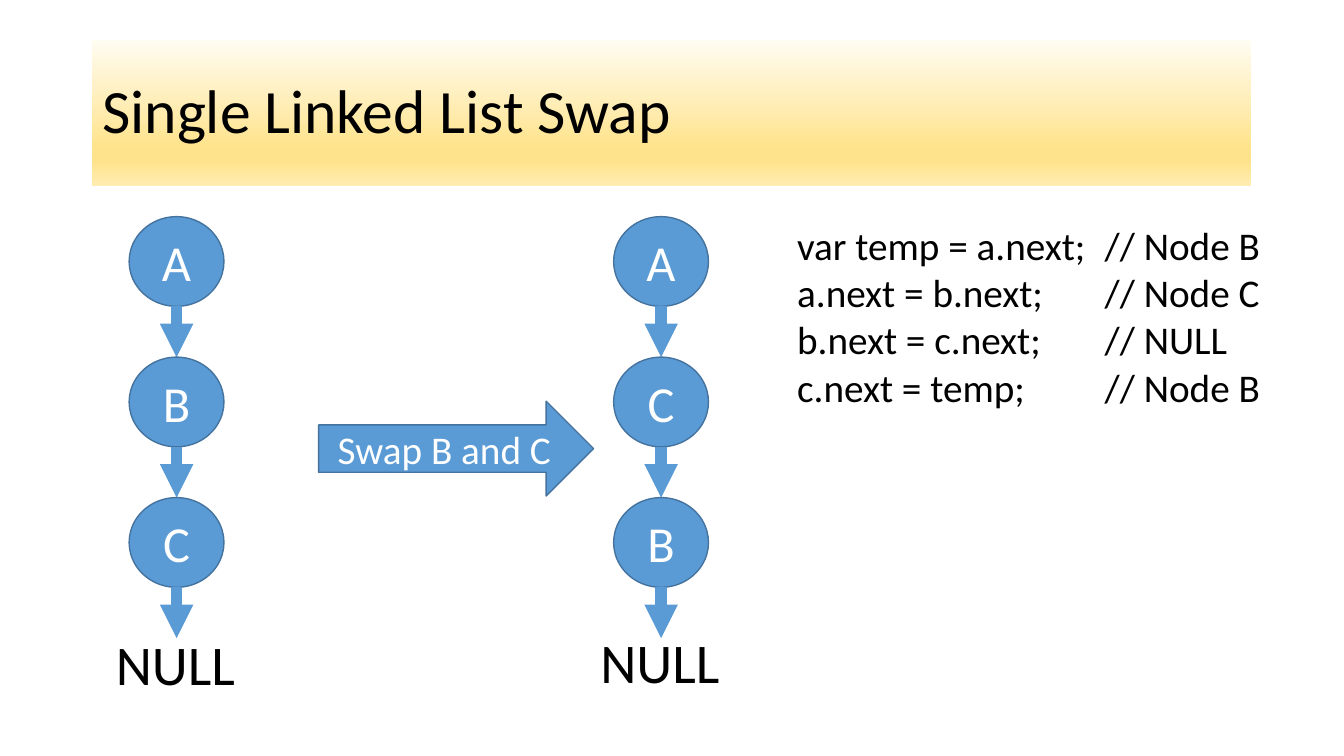
from lxml import etree
from pptx import Presentation
from pptx import util as u
from pptx.dml.color import RGBColor
from pptx.enum import shapes, text
from pptx.oxml import ns

BLUE = RGBColor(0x5B, 0x9B, 0xD5)
OUTLINE = RGBColor(0x43, 0x73, 0x9E)
WHITE = RGBColor(0xFF, 0xFF, 0xFF)
BLACK = RGBColor(0x00, 0x00, 0x00)
BANNER_STOPS = [
    (0, RGBColor(0xFF, 0xFC, 0xF2)),
    (74, RGBColor(0xFF, 0xE3, 0x8C)),
    (83, RGBColor(0xFF, 0xE3, 0x8C)),
    (100, RGBColor(0xFF, 0xEC, 0xB2)),
]


def write(shape, lines, size, color, align):
    frame = shape.text_frame
    frame.text = lines
    for paragraph in frame.paragraphs:
        paragraph.alignment = align
        font = paragraph.runs[0].font
        font.name = "Calibri"
        font.size = u.Pt(size)
        font.color.rgb = color


def blue_shape(kind, left, top, width, height, label, size):
    shape = slide.shapes.add_shape(kind, u.Cm(left), u.Cm(top), u.Cm(width), u.Cm(height))
    shape.shadow.inherit = False
    shape.fill.solid()
    shape.fill.fore_color.rgb = BLUE
    shape.line.color.rgb = OUTLINE
    shape.line.width = u.Pt(1)
    write(shape, label, size, WHITE, text.PP_ALIGN.CENTER)
    shape.text_frame.vertical_anchor = text.MSO_ANCHOR.MIDDLE


prs = Presentation()
prs.slide_width = u.Cm(33.87)
prs.slide_height = u.Cm(19.05)
slide = prs.slides.add_slide(prs.slide_layouts[6])

banner = slide.shapes.add_shape(
    shapes.MSO_SHAPE.RECTANGLE, u.Cm(2.33), u.Cm(1.01), u.Cm(29.21), u.Cm(3.68))
banner.shadow.inherit = False
banner.line.fill.background()
banner.fill.gradient()
banner.fill.gradient_angle = 270
stops = banner.fill._fill._gradFill.find(ns.qn("a:gsLst"))
for stop in list(stops):
    stops.remove(stop)
for percent, color in BANNER_STOPS:
    stop = etree.SubElement(stops, ns.qn("a:gs"), pos=str(percent * 1000))
    etree.SubElement(stop, ns.qn("a:srgbClr"), val=str(color))
write(banner, "Single Linked List Swap", 44, BLACK, text.PP_ALIGN.LEFT)
banner.text_frame.vertical_anchor = text.MSO_ANCHOR.MIDDLE
banner.text_frame.paragraphs[0].line_spacing = 0.9

NODE_W, NODE_H = 2.39, 2.26
FIRST_TOP, PITCH = 5.46, 3.54
for center, order, null_top in [(4.45, "ABC", 15.74), (16.66, "ACB", 15.69)]:
    for index, node in enumerate(order):
        top = FIRST_TOP + index * PITCH
        blue_shape(shapes.MSO_SHAPE.OVAL, center - NODE_W / 2, top, NODE_W, NODE_H, node, 36)
        pointer = slide.shapes.add_connector(
            shapes.MSO_CONNECTOR.STRAIGHT,
            u.Cm(center), u.Cm(top + NODE_H), u.Cm(center), u.Cm(top + PITCH))
        pointer.line.color.rgb = BLUE
        pointer.line.width = u.Pt(8)
        etree.SubElement(pointer.line._get_or_add_ln(), ns.qn("a:tailEnd"), type="triangle")
        etree.SubElement(pointer._element.spPr, ns.qn("a:effectLst"))
    null = slide.shapes.add_textbox(
        u.Cm(center - 1.78), u.Cm(null_top), u.Cm(3.56), u.Cm(1.96))
    null.text_frame.word_wrap = False
    write(null, "NULL", 40, BLACK, text.PP_ALIGN.LEFT)

blue_shape(shapes.MSO_SHAPE.RIGHT_ARROW, 8.03, 10.11, 6.93, 2.39, "Swap B and C", 28)

CODE = [
    ("var temp = a.next;", "// Node B"),
    ("a.next = b.next;", "// Node C"),
    ("b.next = c.next;", "// NULL"),
    ("c.next = temp;", "// Node B"),
]
listing = slide.shapes.add_textbox(u.Cm(19.84), u.Cm(5.46), u.Cm(12.32), u.Cm(6.58))
listing.text_frame.word_wrap = True
write(listing, "\n".join("\t".join(line) for line in CODE), 28, BLACK, text.PP_ALIGN.LEFT)
for paragraph in listing.text_frame.paragraphs:
    tabs = etree.SubElement(paragraph._p.get_or_add_pPr(), ns.qn("a:tabLst"))
    etree.SubElement(tabs, ns.qn("a:tab"), pos=str(u.Cm(7.75)), algn="l")

prs.save("out.pptx")
